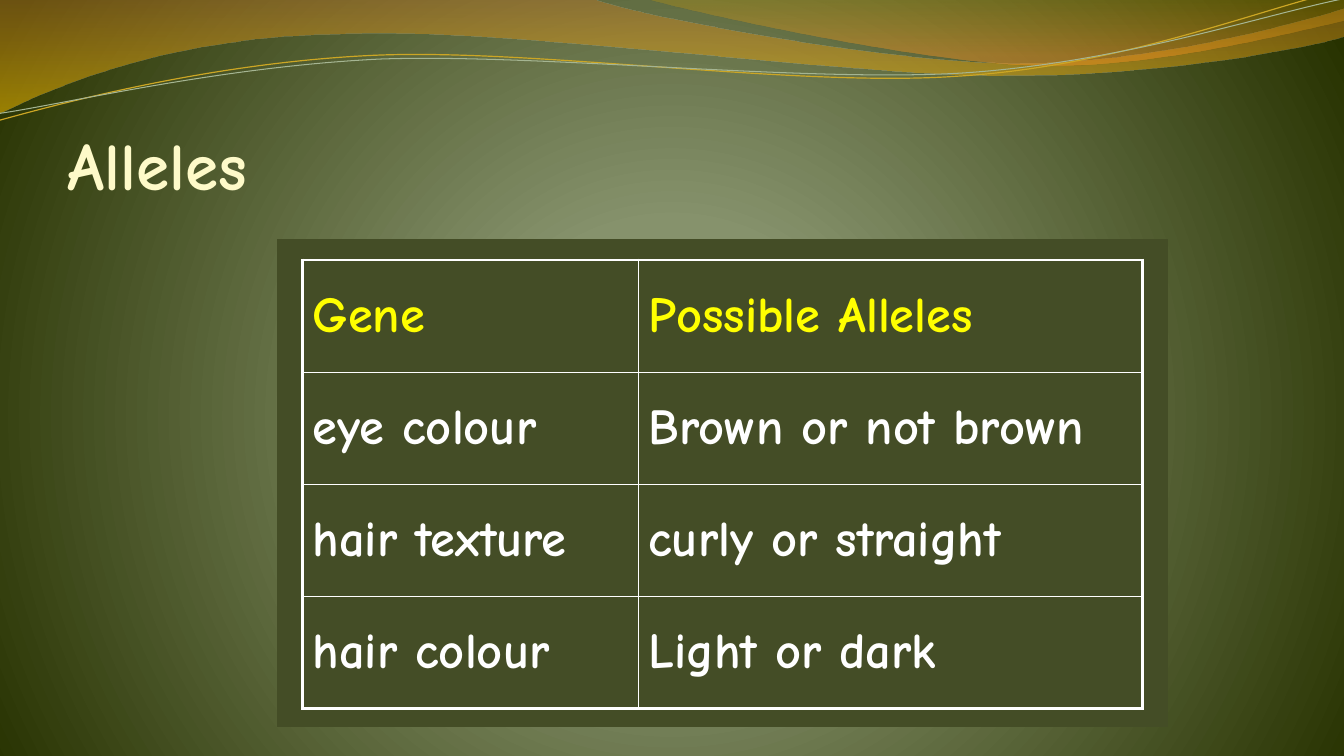
from dataclasses import dataclass

from lxml import etree
from pptx import Presentation
from pptx.dml.color import RGBColor
from pptx.enum.shapes import MSO_SHAPE
from pptx.enum.text import MSO_ANCHOR, MSO_AUTO_SIZE, PP_ALIGN
from pptx.oxml.ns import qn
from pptx.shapes.autoshape import Shape
from pptx.shapes.shapetree import GroupShapes, SlideShapes
from pptx.slide import Slide
from pptx.table import _Cell
from pptx.text.text import TextFrame
from pptx.util import Inches, Pt

RECTANGLE = MSO_SHAPE.RECTANGLE
MIDDLE, BOTTOM = MSO_ANCHOR.MIDDLE, MSO_ANCHOR.BOTTOM
LEFT = PP_ALIGN.LEFT
NO_AUTOFIT = MSO_AUTO_SIZE.NONE
TITLE_ONLY = 5

Point = tuple[float, float]
Segment = tuple[Point, ...]


@dataclass(frozen=True)
class Theme:
    font: str = "Comic Neue"
    title_size: float = 48
    table_size: float = 36
    title: str = "FEFAC9"
    heading: str = "FFFF00"
    body: str = "FFFFFF"
    panel: str = "444D26"
    gold_line: str = "CCA624"
    sage_line: str = "A5B592"
    outer_border: float = 2.25
    inner_border: float = 1
    strand_rotation: float = 357.3


@dataclass(frozen=True)
class Stop:
    position: int
    color: str
    opacity: int = 100


@dataclass(frozen=True)
class Ribbon:
    start: Point
    segments: list[Segment]
    stops: list[Stop]


@dataclass(frozen=True)
class Strand:
    start: Point
    segments: list[Segment]
    color: str
    width: float


THEME = Theme()

BACKGROUND = [Stop(0, "8F9B72"), Stop(25, "86926C"), Stop(100, "273200")]

RIBBONS = [
    Ribbon(
        (0, 0),
        [((5.87, -0.01),),
         ((6.34, 0.17), (8.85, 0.63), (10.11, 0.63)),
         ((11.38, 0.63), (12.78, 0.26), (13.33, 0.09)),
         ((13.35, 0.36),),
         ((13.11, 0.44), (11.6, 0.76), (9.94, 0.75)),
         ((8.29, 0.75), (5.09, 0.28), (3.43, 0.34)),
         ((1.72, 0.36), (0.61, 0.83), (-0.01, 1.13)),
         ((0, 0),)],
        [Stop(0, "C07A28", 45), Stop(100, "F7BF00", 55)],
    ),
    Ribbon(
        (6.39, -0.01),
        [((6.79, 0.11), (9.09, 0.62), (10.25, 0.65)),
         ((11.41, 0.69), (12.82, 0.32), (13.33, 0.21)),
         ((13.33, 0),),
         ((6.39, -0.01),)],
        [Stop(0, "C09709", 30), Stop(80, "F59320", 45)],
    ),
]

STRANDS = [
    Strand(
        (-0.03, 0.88),
        [((0.63, 0.73), (2.11, 0.41), (3.69, 0.41)),
         ((5.28, 0.41), (7.88, 0.93), (9.49, 0.89)),
         ((11.09, 0.87), (12.54, 0.36), (13.33, 0.22))],
        THEME.gold_line, 0.85,
    ),
    Strand(
        (-0.02, 0.81),
        [((0.62, 0.75), (2.18, 0.45), (3.78, 0.45)),
         ((5.37, 0.47), (7.95, 0.88), (9.54, 0.86)),
         ((11.14, 0.83), (12.56, 0.42), (13.36, 0.3))],
        THEME.sage_line, 0.75,
    ),
]

ALLELES = [
    ("Gene", "Possible Alleles"),
    ("eye colour", "Brown or not brown"),
    ("hair texture", "curly or straight"),
    ("hair colour", "Light or dark"),
]


def add_color(parent: etree._Element, color: str, opacity: int = 100) -> None:
    rgb = etree.SubElement(parent, qn("a:srgbClr"), val=color)
    if opacity < 100:
        etree.SubElement(rgb, qn("a:alpha"), val=str(opacity * 1000))


def replace_with_gradient(solid: etree._Element, stops: list[Stop]) -> etree._Element:
    gradient = etree.Element(qn("a:gradFill"), rotWithShape="1")
    stop_list = etree.SubElement(gradient, qn("a:gsLst"))
    for stop in stops:
        entry = etree.SubElement(stop_list, qn("a:gs"), pos=str(stop.position * 1000))
        add_color(entry, stop.color, stop.opacity)
    solid.getparent().replace(solid, gradient)
    return gradient


def paint_background(slide: Slide) -> None:
    slide.background.fill.solid()
    solid = slide.element.xpath("p:cSld/p:bg/p:bgPr/a:solidFill")[0]
    gradient = replace_with_gradient(solid, BACKGROUND)
    circle = etree.SubElement(gradient, qn("a:path"), path="circle")
    etree.SubElement(circle, qn("a:fillToRect"), l="10000", t="110000", r="10000", b="100000")


def draw_outline(shapes: SlideShapes | GroupShapes, start: Point,
                 segments: list[Segment], closed: bool) -> Shape:
    builder = shapes.build_freeform(*map(Inches, start))
    builder.add_line_segments(
        [(Inches(x), Inches(y)) for segment in segments for x, y in segment], close=closed)
    outline = builder.convert_to_shape()
    outline.shadow.inherit = False
    steps = iter(outline.element.xpath(".//a:lnTo"))
    for segment in segments:
        parts = [next(steps) for _ in segment]
        if len(parts) == 3:
            curve = etree.Element(qn("a:cubicBezTo"))
            parts[0].addprevious(curve)
            for part in parts:
                curve.append(part[0])
                part.getparent().remove(part)
    return outline


def draw_ribbon(slide: Slide, ribbon: Ribbon) -> None:
    outline = draw_outline(slide.shapes, ribbon.start, ribbon.segments, True)
    outline.line.fill.background()
    outline.fill.solid()
    gradient = replace_with_gradient(outline.element.xpath("p:spPr/a:solidFill")[0], ribbon.stops)
    etree.SubElement(gradient, qn("a:lin"), ang="5400000", scaled="0")


def draw_strand(shapes: GroupShapes, strand: Strand) -> None:
    outline = draw_outline(shapes, strand.start, strand.segments, False)
    outline.rotation = THEME.strand_rotation
    outline.fill.background()
    outline.line.color.rgb = RGBColor.from_string(strand.color)
    outline.line.width = Pt(strand.width)


def write(frame: TextFrame, text: str, size: float, color: str) -> None:
    run = frame.paragraphs[0].add_run()
    run.text = text
    run.font.name = THEME.font
    run.font.size = Pt(size)
    run.font.bold = True
    run.font.color.rgb = RGBColor.from_string(color)


def add_title(slide: Slide) -> None:
    title = slide.shapes.title
    title.left, title.top, title.width, title.height = map(Inches, (0.67, 0.77, 12, 1.25))
    frame = title.text_frame
    frame.margin_left = frame.margin_right = frame.margin_bottom = 0
    frame.margin_top = Inches(0.05)
    frame.vertical_anchor = BOTTOM
    frame.auto_size = NO_AUTOFIT
    frame.paragraphs[0].alignment = LEFT
    write(frame, "Alleles", THEME.title_size, THEME.title)
    title.element.getparent().append(title.element)


def add_panel(slide: Slide) -> None:
    panel = slide.shapes.add_shape(RECTANGLE, *map(Inches, (2.75, 2.38, 8.83, 4.83)))
    panel.shadow.inherit = False
    panel.fill.solid()
    panel.fill.fore_color.rgb = panel.line.color.rgb = RGBColor.from_string(THEME.panel)
    panel.line.width = Pt(0.75)


def set_borders(cell: _Cell, outer_sides: dict[str, bool]) -> None:
    properties = cell._tc.get_or_add_tcPr()
    for index, (side, outer) in enumerate(outer_sides.items()):
        width = Pt(THEME.outer_border if outer else THEME.inner_border)
        border = etree.Element(qn(f"a:ln{side}"), w=str(width))
        add_color(etree.SubElement(border, qn("a:solidFill")), THEME.body)
        properties.insert(index, border)


def add_allele_table(slide: Slide) -> None:
    rows, columns = len(ALLELES), len(ALLELES[0])
    table = slide.shapes.add_table(rows, columns, *map(Inches, (3, 2.58, 8.33, 4.45))).table
    table.first_row = table.horz_banding = False
    for column, width in zip(table.columns, (3.33, 5)):
        column.width = Inches(width)
    for r, entries in enumerate(ALLELES):
        for c, text in enumerate(entries):
            cell = table.cell(r, c)
            cell.fill.background()
            cell.vertical_anchor = MIDDLE
            cell.text_frame.paragraphs[0].space_before = Pt(THEME.table_size * 0.2)
            write(cell.text_frame, text, THEME.table_size, THEME.body if r else THEME.heading)
            set_borders(cell, {"L": c == 0, "R": c == columns - 1, "T": r == 0, "B": r == rows - 1})


def main() -> None:
    """Build the alleles slide and save it."""
    deck = Presentation()
    deck.slide_width, deck.slide_height = Inches(13.33), Inches(7.5)
    slide = deck.slides.add_slide(deck.slide_layouts[TITLE_ONLY])
    paint_background(slide)
    for ribbon in RIBBONS:
        draw_ribbon(slide, ribbon)
    strands = slide.shapes.add_group_shape()
    for strand in STRANDS:
        draw_strand(strands.shapes, strand)
    add_panel(slide)
    add_title(slide)
    add_allele_table(slide)
    deck.save("out.pptx")


if __name__ == "__main__":
    main()
